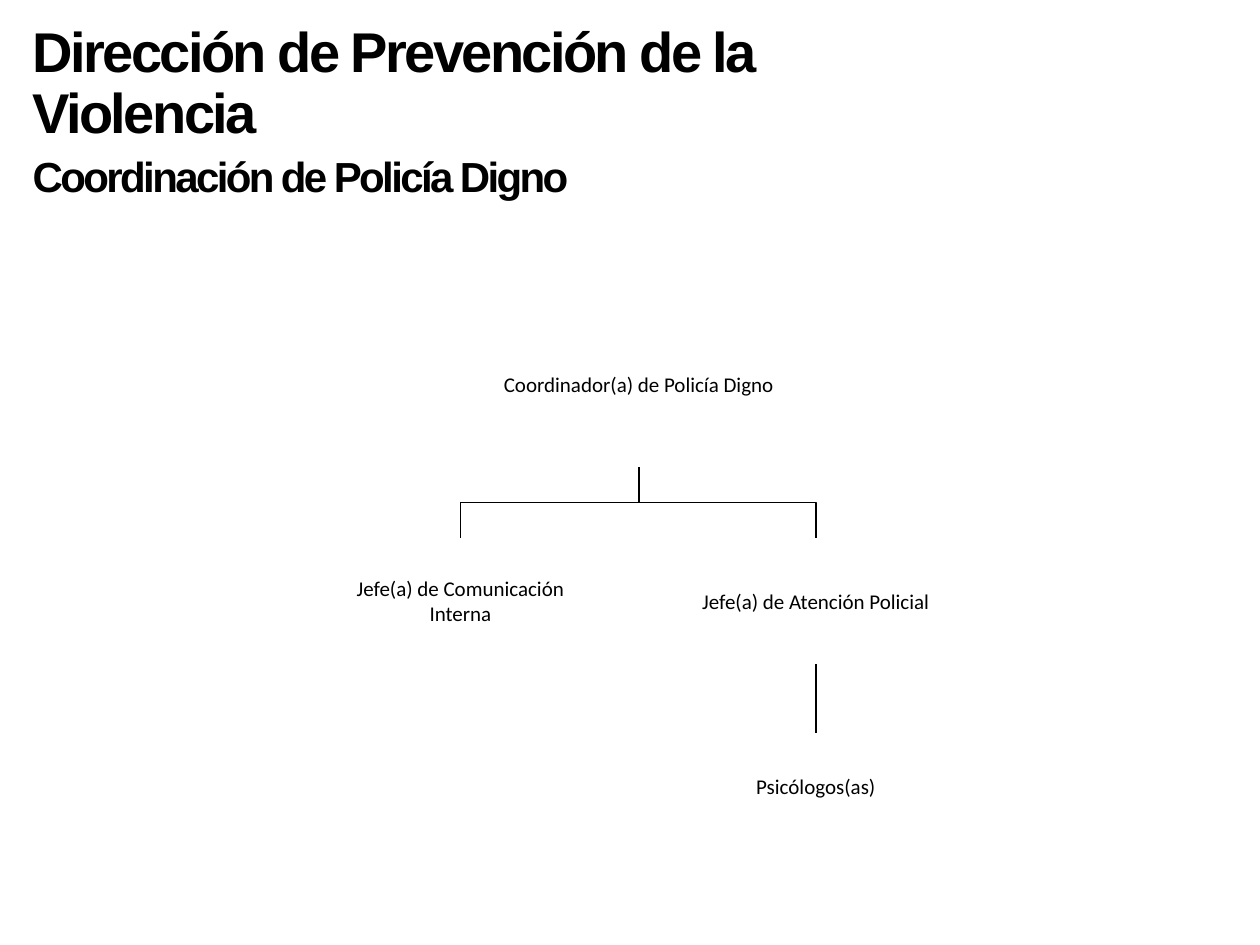
from lxml import etree
from pptx import Presentation
from pptx import util as u
from pptx.dml.color import RGBColor
from pptx.enum import shapes, text
from pptx.oxml import ns

COLORS = {"ink": "000000", "paper": "FFFFFF"}
TITLE_FONT = {"name": "Arial", "bold": True}
ROLE_FONT = {"name": "Calibri", "size": u.Pt(12)}
ROLE_FRAME = {
    "word_wrap": True,
    "vertical_anchor": text.MSO_ANCHOR.MIDDLE,
    "margin_left": u.Inches(0.01),
    "margin_right": u.Inches(0.01),
    "margin_top": u.Inches(0.01),
    "margin_bottom": u.Inches(0.01),
}
TITLE_FRAME = {
    "word_wrap": True,
    "auto_size": text.MSO_AUTO_SIZE.NONE,
    "vertical_anchor": text.MSO_ANCHOR.MIDDLE,
}
TITLE_LINES = [
    ("Dirección de Prevención de la Violencia", 32, {"line_spacing": 0.9}),
    ("Coordinación de Policía Digno", 24, {"line_spacing": 1.0, "space_before": u.Pt(3)}),
]
ROLES = {
    "coordinator": ("Coordinador(a) de Policía Digno", (1.08, 0, 2.64, 1.32)),
    "communication": ("Jefe(a) de Comunicación Interna", (0, 1.88, 1.97, 1)),
    "attention": ("Jefe(a) de Atención Policial", (2.82, 1.88, 1.97, 1)),
    "psychologists": ("Psicólogos(as)", (2.82, 3.43, 1.97, 0.84)),
}
REPORTS = [
    ("coordinator", "communication"),
    ("coordinator", "attention"),
    ("attention", "psychologists"),
]


def set_all(target, values):
    for name, value in values.items():
        setattr(target, name, value)


def color(name):
    return RGBColor.from_string(COLORS[name])


def style_line(shape):
    shape.line.color.rgb = color("ink")
    shape.line.width = u.Pt(1)


def add_title(page, left, top, width, height):
    title = page.shapes.title
    set_all(title, {"left": u.Inches(left), "top": u.Inches(top),
                    "width": u.Inches(width), "height": u.Inches(height)})
    frame = title.text_frame
    set_all(frame, TITLE_FRAME)
    for index, (words, size, spacing) in enumerate(TITLE_LINES):
        para = frame.add_paragraph() if index else frame.paragraphs[0]
        para.alignment = text.PP_ALIGN.LEFT
        set_all(para, spacing)
        span = para.add_run()
        span.text = words
        set_all(span.font, {**TITLE_FONT, "size": u.Pt(size)})
        span.font.color.rgb = color("ink")
        span.font._element.set("spc", "-150")


def add_role(page, words, left, top, width, height):
    box = page.shapes.add_shape(
        shapes.MSO_SHAPE.RECTANGLE,
        u.Inches(left), u.Inches(top), u.Inches(width), u.Inches(height))
    box.shadow.inherit = False
    box.fill.solid()
    box.fill.fore_color.rgb = color("paper")
    box.line.fill.background()
    set_all(box.text_frame, ROLE_FRAME)
    para = box.text_frame.paragraphs[0]
    para.alignment = text.PP_ALIGN.CENTER
    span = para.add_run()
    span.text = words
    set_all(span.font, ROLE_FONT)
    span.font.color.rgb = color("ink")
    return box


def add_report_line(page, manager, report):
    start_x, start_y = manager.left + manager.width // 2, manager.top + manager.height
    end_x, end_y = report.left + report.width // 2, report.top
    if abs(start_x - end_x) < u.Inches(0.01):
        line = page.shapes.add_connector(
            shapes.MSO_CONNECTOR.STRAIGHT, start_x, start_y, end_x, end_y)
        etree.SubElement(line._element.spPr, ns.qn("a:effectLst"))
    else:
        middle_y = (start_y + end_y) // 2
        builder = page.shapes.build_freeform(start_x, start_y)
        builder.add_line_segments(
            [(start_x, middle_y), (end_x, middle_y), (end_x, end_y)], close=False)
        line = builder.convert_to_shape()
        line.shadow.inherit = False
        line.fill.background()
    style_line(line)


def add_chart_of_roles(page, left, top):
    boxes = {
        role: add_role(page, words, left + x, top + y, width, height)
        for role, (words, (x, y, width, height)) in ROLES.items()
    }
    for manager, report in REPORTS:
        add_report_line(page, boxes[manager], boxes[report])


def main():
    deck = Presentation()
    deck.slide_width, deck.slide_height = u.Inches(10), u.Inches(7.5)
    page = deck.slides.add_slide(deck.slide_layouts.get_by_name("Title Only"))
    add_title(page, 0.16, 0.16, 7.58, 1.47)
    add_chart_of_roles(page, 2.67, 2.39)
    deck.save("out.pptx")


if __name__ == "__main__":
    main()
